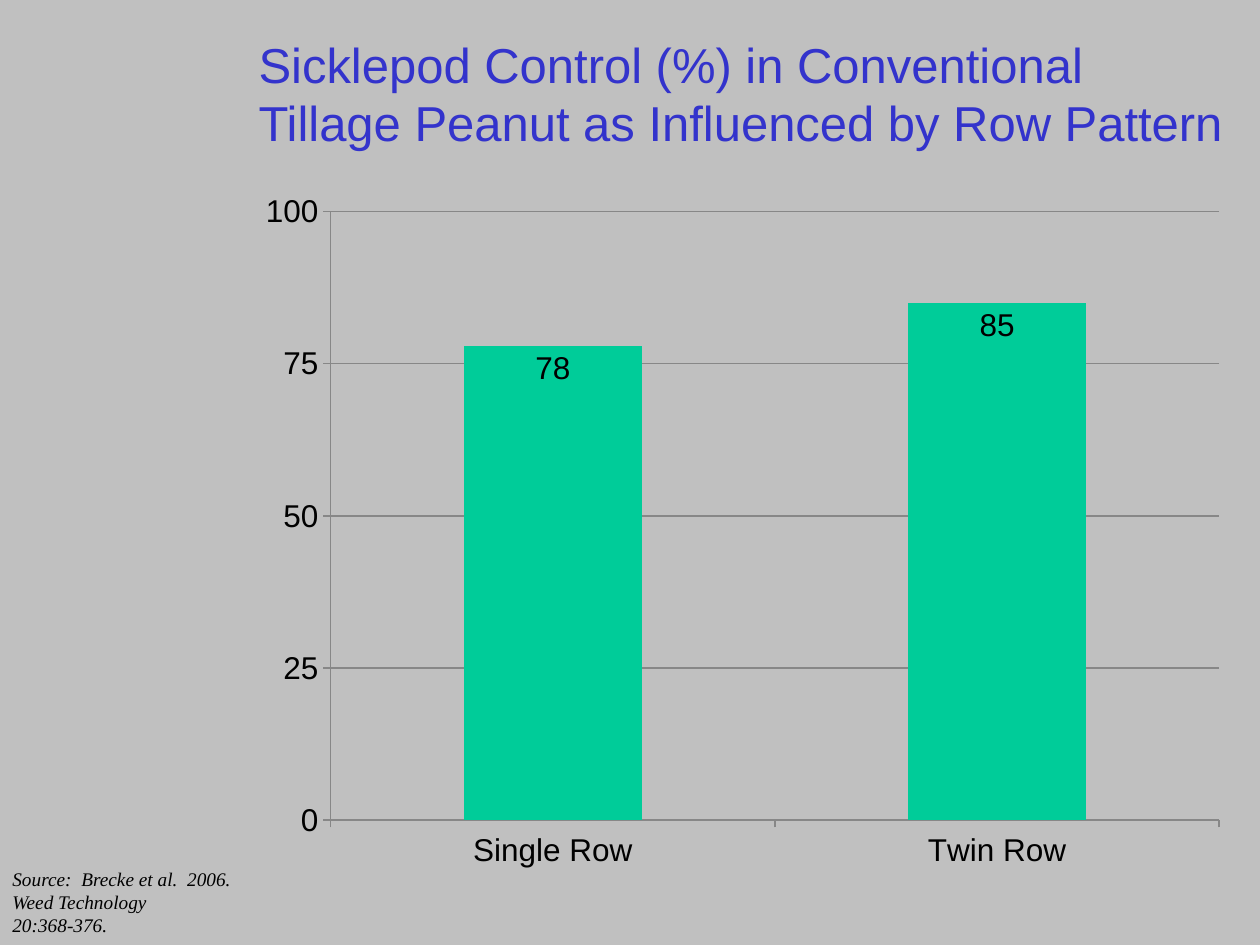
"""Build the slide on sicklepod control by peanut row pattern."""
from dataclasses import dataclass
from typing import Any

from pptx import Presentation
from pptx import util as u
from pptx.chart import data
from pptx.dml import color
from pptx.enum import chart as charts
from pptx.enum import text

PX = 914400 // 126


def px(*lengths):
    return [u.Emu(length * PX) for length in lengths]


def rgb(value):
    return color.RGBColor.from_string(value)


@dataclass
class SlideBuilder:
    slide: Any
    sans: str = "Arial"
    serif: str = "Times New Roman"
    ink: str = "000000"
    heading: str = "3333CC"
    bar: str = "00CC99"
    grid: str = "878787"
    paper: str = "C0C0C0"

    def background(self):
        fill = self.slide.background.fill
        fill.solid()
        fill.fore_color.rgb = rgb(self.paper)

    def style(self, font, name, size, colour, italic=False):
        font.name, font.size = name, u.Pt(size)
        font.bold, font.italic = False, italic
        font.color.rgb = rgb(colour)

    def title(self, words, box):
        shape = self.slide.shapes.title
        shape.left, shape.top, shape.width, shape.height = px(*box)
        frame = shape.text_frame
        frame.text = words
        frame.word_wrap = True
        frame.auto_size = text.MSO_AUTO_SIZE.NONE
        frame.vertical_anchor = text.MSO_ANCHOR.MIDDLE
        paragraph = frame.paragraphs[0]
        paragraph.alignment = text.PP_ALIGN.LEFT
        self.style(paragraph.font, self.sans, 28, self.heading)

    def column_chart(self, categories, values, box):
        chart_data = data.CategoryChartData()
        chart_data.categories = categories
        chart_data.add_series("Control (%)", values)
        chart = self.slide.shapes.add_chart(
            charts.XL_CHART_TYPE.COLUMN_CLUSTERED, *px(*box), chart_data
        ).chart
        chart.has_legend = chart.has_title = False
        self.style(chart.font, self.sans, 18, self.ink)

        plot = chart.plots[0]
        plot.gap_width = 150
        plot.vary_by_categories = False
        fill = plot.series[0].format.fill
        fill.solid()
        fill.fore_color.rgb = rgb(self.bar)
        plot.has_data_labels = True
        labels = plot.data_labels
        labels.show_value = True
        labels.position = charts.XL_LABEL_POSITION.INSIDE_END
        self.style(labels.font, self.sans, 18, self.ink)

        scale = chart.value_axis
        scale.minimum_scale, scale.maximum_scale = 0, 100
        scale.major_unit = 25
        scale.has_major_gridlines = True
        for axis in (chart.category_axis, scale):
            axis.major_tick_mark = charts.XL_TICK_MARK.OUTSIDE
            axis.minor_tick_mark = charts.XL_TICK_MARK.NONE
        for part in (chart.category_axis, scale, scale.major_gridlines):
            part.format.line.color.rgb = rgb(self.grid)
            part.format.line.width = u.Pt(0.75)

    def source_note(self, lines, box):
        frame = self.slide.shapes.add_textbox(*px(*box)).text_frame
        frame.word_wrap = False
        frame.auto_size = text.MSO_AUTO_SIZE.SHAPE_TO_FIT_TEXT
        frame.text = "\n".join(lines)
        for paragraph in frame.paragraphs:
            self.style(paragraph.font, self.serif, 11, self.ink, italic=True)


def main():
    presentation = Presentation()
    presentation.slide_width, presentation.slide_height = px(1260, 945)
    builder = SlideBuilder(
        presentation.slides.add_slide(presentation.slide_layouts[5])
    )
    builder.background()
    builder.title(
        "Sicklepod Control (%) in Conventional Tillage Peanut "
        "as Influenced by Row Pattern",
        (246, 14, 1004, 158),
    )
    builder.column_chart(
        ["Single Row", "Twin Row"], [78, 85], (246, 180, 993, 702)
    )
    builder.source_note(
        ["Source:  Brecke et al.  2006.", "Weed Technology", "20:368-376."],
        (0, 861, 251, 83),
    )
    presentation.save("out.pptx")


if __name__ == "__main__":
    main()
